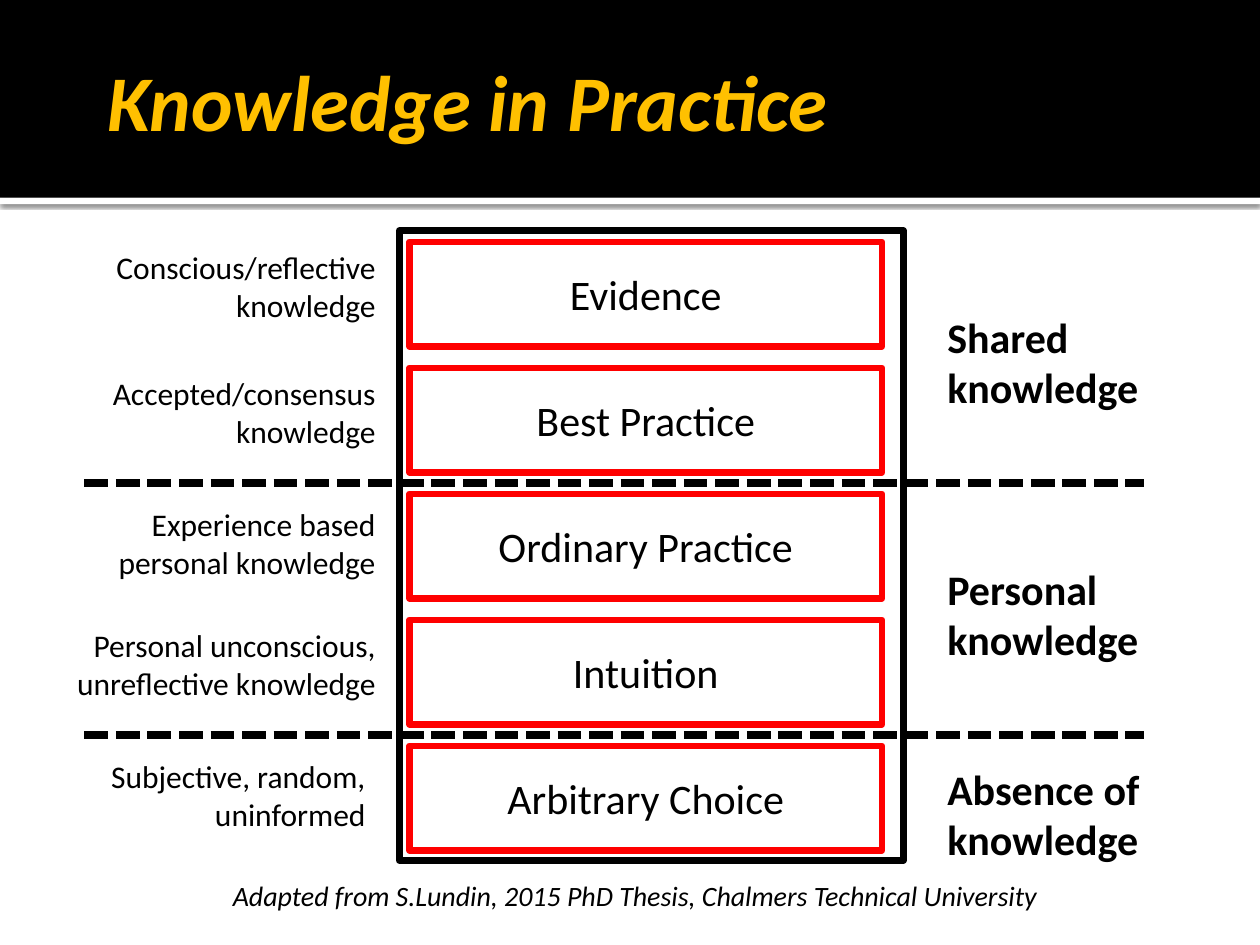
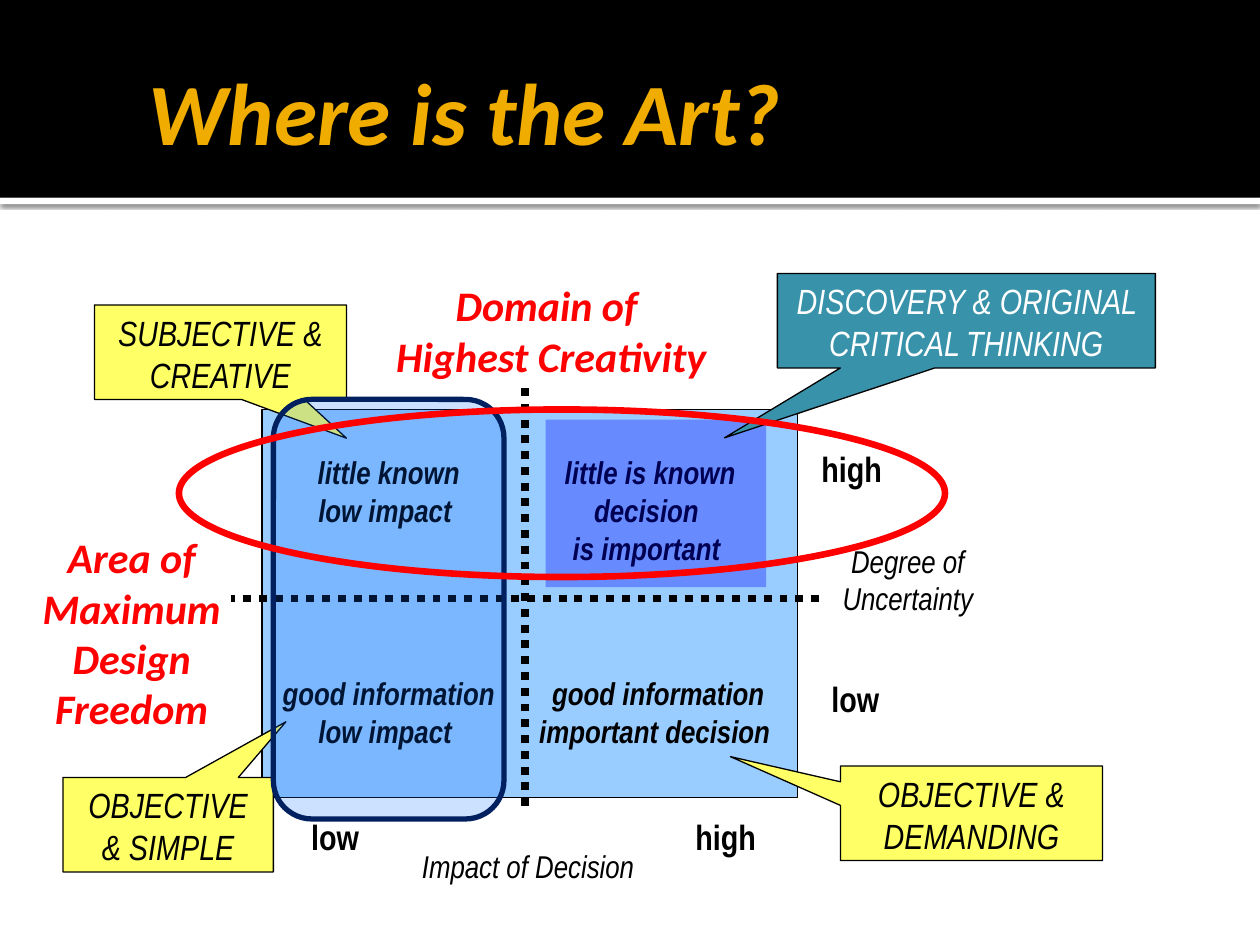
from lxml.etree import SubElement
from pptx import Presentation
from pptx.dml.color import RGBColor
from pptx.enum.dml import MSO_LINE
from pptx.enum.shapes import MSO_CONNECTOR, MSO_SHAPE
from pptx.enum.text import MSO_ANCHOR, PP_ALIGN
from pptx.oxml.ns import qn
from pptx.util import Inches, Pt

BLACK = RGBColor(0x00, 0x00, 0x00)
WHITE = RGBColor(0xFF, 0xFF, 0xFF)
RED = RGBColor(0xFF, 0x00, 0x00)
GOLD = RGBColor(0xFF, 0xC0, 0x00)
AMBER = RGBColor(0xF0, 0xAD, 0x00)
YELLOW = RGBColor(0xFF, 0xFF, 0x66)
TEAL = RGBColor(0x37, 0x92, 0xAA)
SKY = RGBColor(0x99, 0xCC, 0xFF)
BLUE = RGBColor(0x00, 0x00, 0xFF)
AZURE = RGBColor(0x00, 0x66, 0xFF)
NAVY = RGBColor(0x00, 0x20, 0x60)

SANS = "Calibri"
NARROW = "Arial Narrow"
LEFT, CENTER, RIGHT = PP_ALIGN.LEFT, PP_ALIGN.CENTER, PP_ALIGN.RIGHT
HEAVY = 3.78


def write(frame, text, size, font=SANS, color=BLACK, bold=False, italic=False,
          align=LEFT, anchor=MSO_ANCHOR.TOP, wrap=True):
    frame.text = text
    frame.word_wrap = wrap
    frame.vertical_anchor = anchor
    for para in frame.paragraphs:
        para.alignment = align
        for run in para.runs:
            face = run.font
            face.name, face.size = font, Pt(size)
            face.bold, face.italic = bold, italic
            face.color.rgb = color


def label(slide, box, text, size, **style):
    area = slide.shapes.add_textbox(*map(Inches, box))
    write(area.text_frame, text, size, **style)


def shape(slide, kind, box, fill=None, line=None, width=0.75, alpha=None):
    """Add a preset shape; alpha is its fill's opacity in percent."""
    item = slide.shapes.add_shape(kind, *map(Inches, box))
    item.shadow.inherit = False
    if fill is None:
        item.fill.background()
    else:
        item.fill.solid()
        item.fill.fore_color.rgb = fill
    if alpha is not None:
        tint = item.fill._xPr.find(qn("a:solidFill"))[0]
        SubElement(tint, qn("a:alpha"), val=str(alpha * 1000))
    if line is None:
        item.line.fill.background()
    else:
        item.line.color.rgb = line
        item.line.width = Pt(width)
    return item


def dashes(slide, start, end, style):
    link = slide.shapes.add_connector(
        MSO_CONNECTOR.STRAIGHT, *map(Inches, start + end))
    link.line.color.rgb = BLACK
    link.line.width = Pt(4.5)
    link.line.dash_style = style
    SubElement(link._element.spPr, qn("a:effectLst"))


def header(slide, text, box, size, color):
    """Draw the black band with its shaded white edge, and the title on it."""
    edge = shape(slide, MSO_SHAPE.RECTANGLE, (0, 1.57, 10, 0.05), WHITE)
    glow = edge._element.spPr.find(qn("a:effectLst"))
    shade = SubElement(glow, qn("a:outerShdw"), blurRad=str(Pt(2.5)),
                       dist=str(Pt(0.8)), dir="5400000", algn="tl",
                       rotWithShape="0")
    tone = SubElement(shade, qn("a:srgbClr"), val=str(BLACK))
    SubElement(tone, qn("a:alpha"), val="60000")
    shape(slide, MSO_SHAPE.RECTANGLE, (0, 0, 10, 1.57), BLACK)

    title = slide.shapes.title
    title.left, title.top, title.width, title.height = map(Inches, box)
    frame = title.text_frame
    write(frame, text, size, color=color, bold=True, italic=True,
          anchor=MSO_ANCHOR.MIDDLE)
    frame.margin_left = Inches(0.1)
    frame.margin_top = frame.margin_right = frame.margin_bottom = Inches(0.05)
    slide.shapes._spTree.append(title._element)


# Step name, its meaning, and the meaning's left, drop and width in the row
STEPS = [
    ("Evidence", "Conscious/reflective knowledge", -2.42, 0.09, 2.33),
    ("Best Practice", "Accepted/consensus knowledge", -2.42, 0.09, 2.33),
    ("Ordinary Practice", "Experience based personal knowledge",
     -2.42, 0.13, 2.33),
    ("Intuition", "Personal unconscious, unreflective knowledge",
     -2.84, 0.09, 2.75),
    ("Arbitrary Choice", "Subjective, random, uninformed",
     -2.5, 0.13, 2.33),
]
LEVELS = [("Shared knowledge", 0.59), ("Personal knowledge", 2.59),
          ("Absence of knowledge", 4.18)]


def ladder(slide, box):
    """Stack the steps in the box, meanings to the left, levels to the right."""
    left, top, width, height = box
    pitch = height / len(STEPS)
    for row, (name, note, shift, drop, wide) in enumerate(STEPS):
        y = top + row * pitch
        step = shape(slide, MSO_SHAPE.RECTANGLE,
                     (left + 0.08, y + 0.09, width - 0.25, pitch - 0.17),
                     line=RED, width=HEAVY)
        write(step.text_frame, name, 24, align=CENTER,
              anchor=MSO_ANCHOR.MIDDLE)
        label(slide, (left + shift, y + drop, wide, 0.71), note, 18,
              align=RIGHT)
    shape(slide, MSO_SHAPE.RECTANGLE, box, line=BLACK, width=HEAVY)
    for row in (2, 4):
        y = top + row * pitch
        dashes(slide, (left - 2.5, y), (left + width + 1.91, y),
               MSO_LINE.SQUARE_DOT)
    for name, drop in LEVELS:
        label(slide, (left + width + 0.25, top + drop, 2.33, 0.91), name, 24,
              bold=True)


def callout(slide, box, text, tip, fill=YELLOW, color=BLACK):
    """Add a speech box; tip is its point, as shares of the box off centre."""
    item = shape(slide, MSO_SHAPE.RECTANGULAR_CALLOUT, box, fill, BLACK)
    item.adjustments[0], item.adjustments[1] = tip
    write(item.text_frame, text, 20, NARROW, color, italic=True, align=CENTER)


# Left, top, width and height from the matrix corner, then the text
CELLS = [
    (2.3, 0.3, 1.56, 1, "little is known\ndecision \nis important "),
    (0.34, 0.3, 1.33, 0.7, "little known\nlow impact "),
    (0.06, 2.05, 1.89, 0.7, "good information\nlow impact "),
    (2.1, 2.05, 2.09, 0.7, "good information\nimportant decision "),
]
MARKS = [(0.29, 3.17, 0.58, "low"), (3.34, 3.17, 0.69, "high"),
         (4.42, 2.08, 0.58, "low"), (4.34, 0.25, 0.69, "high")]


def matrix(slide, box):
    """Draw the field with its cell texts and scale names."""
    left, top = box[:2]
    shape(slide, MSO_SHAPE.RECTANGLE, box, SKY, BLACK)
    for x, y, wide, high, text in CELLS:
        label(slide, (left + x, top + y, wide, high), text, 18, font=NARROW,
              bold=True, italic=True, align=CENTER, wrap=False)
    for x, y, wide, text in MARKS:
        label(slide, (left + x, top + y, wide, 0.44), text, 20, font=NARROW,
              bold=True, wrap=False)
    label(slide, (left + 1.17, top + 3.42, 2.67, 0.5), "Impact of Decision",
          18, font=NARROW, italic=True)
    label(slide, (left + 4.33, top + 1, 1.59, 0.9), "Degree of\nUncertainty",
          18, font=NARROW, italic=True, align=CENTER, wrap=False)


def axes(slide, box):
    left, top, width, height = box
    x, y = left + 2.09, top + 1.5
    dashes(slide, (x, top - 0.17), (x, top + height + 0.09),
           MSO_LINE.ROUND_DOT)
    dashes(slide, (left + width + 0.17, y), (left - 0.25, y),
           MSO_LINE.ROUND_DOT)


def zones(slide, box):
    """Mark the free column and the creative row of the matrix."""
    left, top, width, height = box
    red = dict(color=RED, bold=True, italic=True, align=CENTER)
    label(slide, (left + 0.92, top - 1.08, 2.75, 0.91),
          "Domain of \nHighest Creativity", 24, **red)
    shape(slide, MSO_SHAPE.ROUNDED_RECTANGLE,
          (left + 0.09, top - 0.08, 1.83, height + 0.25),
          AZURE, NAVY, 3, alpha=20)
    label(slide, (left - 1.91, top + 0.92, 1.75, 1.72),
          "Area of Maximum Design Freedom", 24, **red)
    shape(slide, MSO_SHAPE.OVAL, (left - 0.66, top, width + 1.83, 1.33),
          line=RED, width=HEAVY)


def practice(slide):
    header(slide, "Knowledge in Practice", (0.75, 0.17, 6.33, 1.25), 45, GOLD)
    ladder(slide, (3.17, 1.83, 4, 5))
    label(slide, (1.75, 6.92, 6.67, 0.37),
          "Adapted from S.Lundin, 2015 PhD Thesis, "
          "Chalmers Technical University", 16, italic=True, wrap=False)


def art(slide):
    header(slide, "Where is the Art?", (1.08, 0.25, 6.92, 1.25), 50, AMBER)
    field = (2.08, 3.25, 4.25, 3.08)
    matrix(slide, field)
    callout(slide, (0.75, 2.42, 2, 0.75), "SUBJECTIVE & CREATIVE",
            (0.5, 0.91))
    callout(slide, (0.5, 6.17, 1.67, 0.75), "OBJECTIVE & SIMPLE",
            (0.56, -1.09))
    callout(slide, (6.67, 6.08, 2.08, 0.75), "OBJECTIVE & DEMANDING",
            (-0.92, -0.6))
    axes(slide, field)
    shape(slide, MSO_SHAPE.RECTANGLE, (4.33, 3.33, 1.75, 1.33), BLUE,
          alpha=32)
    callout(slide, (6.17, 2.17, 3, 0.75),
            "DISCOVERY & ORIGINAL CRITICAL THINKING", (-0.64, 1.24),
            TEAL, WHITE)
    zones(slide, field)


def main():
    deck = Presentation()
    deck.slide_width, deck.slide_height = Inches(10), Inches(7.5)
    for build in (practice, art):
        build(deck.slides.add_slide(deck.slide_layouts[5]))
    deck.save("out.pptx")


if __name__ == "__main__":
    main()
